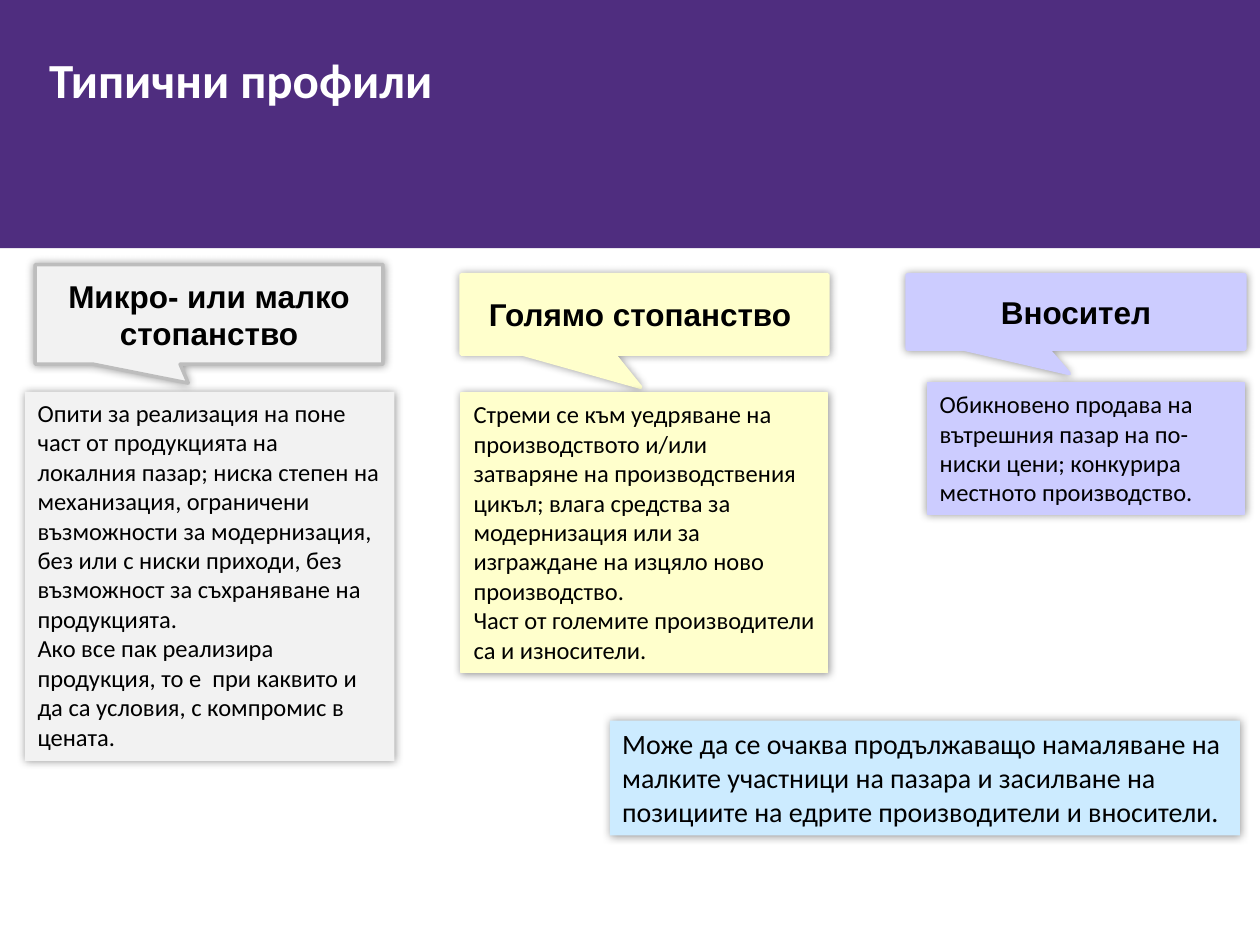
from lxml import etree
from pptx import Presentation
from pptx.dml.color import RGBColor
from pptx.enum.shapes import MSO_SHAPE
from pptx.enum.text import MSO_ANCHOR, PP_ALIGN
from pptx.oxml.ns import qn
from pptx.util import Inches, Pt

RECT = MSO_SHAPE.RECTANGLE
CALL = MSO_SHAPE.RECTANGULAR_CALLOUT
LEFT, MID = PP_ALIGN.LEFT, PP_ALIGN.CENTER
TOP, CORE = MSO_ANCHOR.TOP, MSO_ANCHOR.MIDDLE
GREY, CREAM, LILAC, BLUE = "F2F2F2", "FFFFCC", "CCCCFF", "CCEBFF"
WHITE, BLACK = "FFFFFF", "000000"


def tint(code):
    return RGBColor.from_string(code)


def add_box(kind, spot, fill, edge=None, width=0.75, soft=True):
    box = slide.shapes.add_shape(kind, *[Inches(n) for n in spot])
    box.fill.solid()
    box.fill.fore_color.rgb = tint(fill)
    if edge:
        box.line.color.rgb = tint(edge)
        box.line.width = Pt(width)
    else:
        box.line.fill.background()
    box.shadow.inherit = False
    if soft:
        glow = box._element.spPr.find(qn("a:effectLst"))
        cast = etree.SubElement(glow, qn("a:outerShdw"), blurRad=str(Pt(5)), dist="0", dir="0")
        hue = etree.SubElement(cast, qn("a:srgbClr"), val=BLACK)
        etree.SubElement(hue, qn("a:alpha"), val="40000")
    return box


deck = Presentation()
deck.slide_width = Inches(10)
deck.slide_height = Inches(7.5)
slide = deck.slides.add_slide(deck.slide_layouts[6])

add_box(RECT, (0, 1.97, 10, 5.53), WHITE, soft=False)
add_box(RECT, (0, 0, 10, 1.97), "4F2D7F", soft=False)

title = slide.shapes.add_textbox(Inches(0.39), Inches(0.39), Inches(9.21), Inches(1.57))
frame = title.text_frame
frame.word_wrap = True
frame.margin_left = frame.margin_right = frame.margin_top = frame.margin_bottom = 0
run = frame.paragraphs[0].add_run()
run.text = "Типични профили"
run.font.name = "Calibri"
run.font.size = Pt(28)
run.font.bold = True
run.font.color.rgb = tint(WHITE)

heads = [
    ((0.28, 2.1, 2.76, 0.79), GREY, "BDBDBD", (-0.06, 0.69), "Микро- или малко стопанство"),
    ((3.66, 2.18, 2.91, 0.63), CREAM, CREAM, (-0.01, 0.92), "Голямо стопанство "),
    ((7.2, 2.18, 2.68, 0.59), LILAC, LILAC, (-0.02, 0.83), "Вносител"),
]
notes = [
    ((0.2, 3.11, 2.93, 2.93), GREY, None, 14, [
        "Опити за реализация на поне част от продукцията на локалния пазар; "
        "ниска степен на механизация, ограничени възможности за модернизация, "
        "без или с ниски приходи, без възможност за съхраняване на продукцията.",
        "Ако все пак реализира продукция, то е  при каквито и да са условия, "
        "с компромис в цената."]),
    ((3.66, 3.12, 2.91, 2.22), CREAM, CREAM, 14, [
        "Стреми се към уедряване на производството и/или затваряне на "
        "производствения цикъл; влага средства за модернизация или за "
        "изграждане на изцяло ново производство.",
        "Част от големите производители са и износители."]),
    ((7.36, 3.04, 2.52, 1.04), LILAC, LILAC, 14, [
        "Обикновено продава на вътрешния пазар на по-ниски цени; "
        "конкурира местното производство."]),
    ((4.84, 5.72, 5, 0.91), BLUE, None, 16, [
        "Може да се очаква продължаващо намаляване на малките участници на "
        "пазара и засилване на позициите на едрите производители и вносители."]),
]

texts = []
for spot, fill, edge, tip, name in heads:
    box = add_box(CALL, spot, fill, edge, 2)
    box.adjustments[0], box.adjustments[1] = tip
    texts.append((box, [name], "Arial", 18, True, MID, CORE))
for spot, fill, edge, size, lines in notes:
    box = add_box(RECT, spot, fill, edge)
    texts.append((box, lines, "Calibri", size, False, LEFT, TOP))

for box, lines, font, size, bold, align, anchor in texts:
    frame = box.text_frame
    frame.word_wrap = True
    frame.vertical_anchor = anchor
    for i, line in enumerate(lines):
        para = frame.add_paragraph() if i else frame.paragraphs[0]
        para.alignment = align
        run = para.add_run()
        run.text = line
        run.font.name = font
        run.font.size = Pt(size)
        run.font.bold = bold
        run.font.color.rgb = tint(BLACK)

deck.save("out.pptx")
